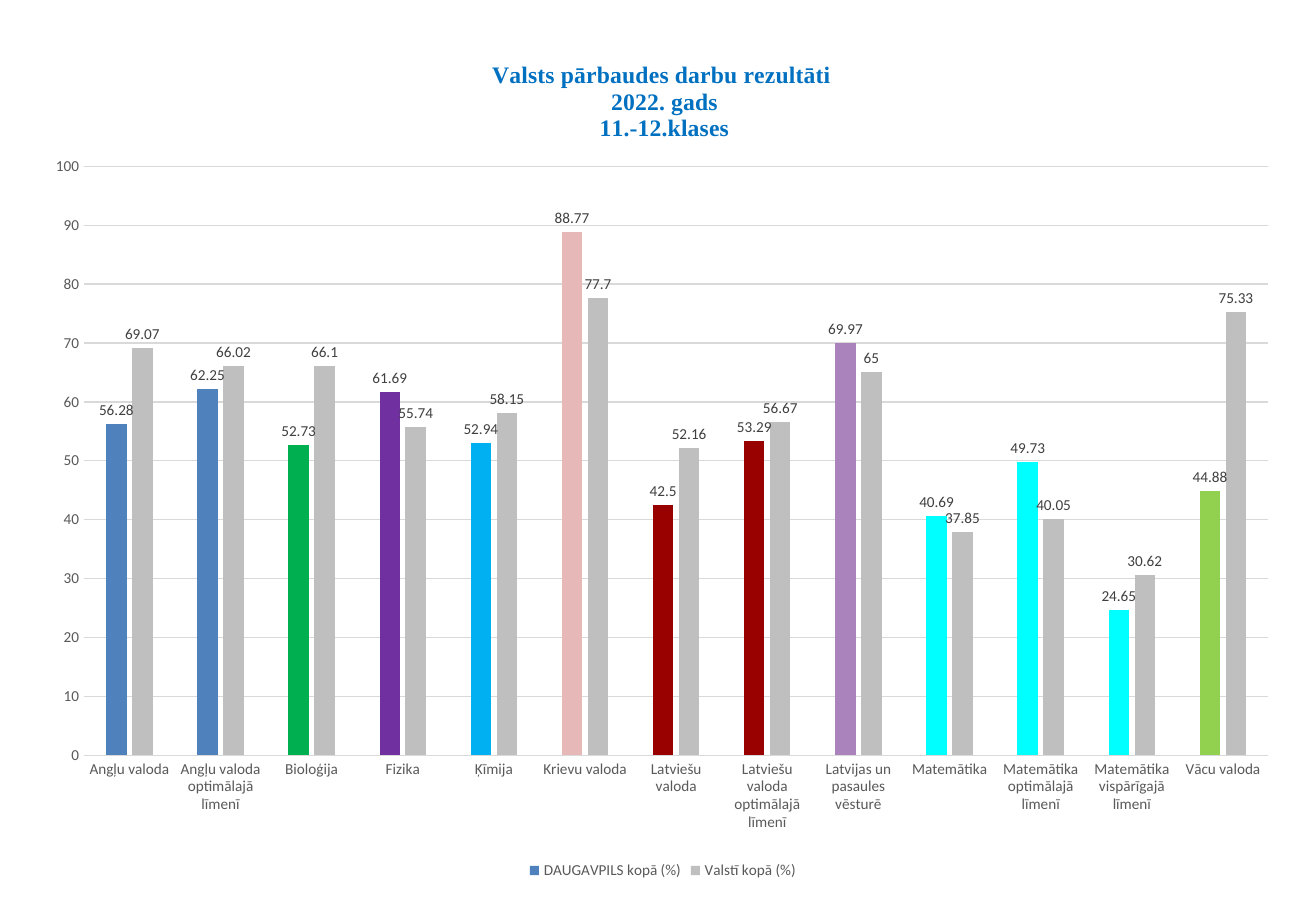
"""Builds a slide with a column chart of state examination results."""
from dataclasses import dataclass

from lxml.etree import SubElement
from pptx import Presentation
from pptx.chart.chart import Chart
from pptx.chart.data import CategoryChartData
from pptx.dml.color import RGBColor
from pptx.enum.chart import (XL_CHART_TYPE, XL_LABEL_POSITION,
                             XL_LEGEND_POSITION, XL_TICK_MARK)
from pptx.oxml import parse_xml
from pptx.oxml.ns import nsdecls, qn
from pptx.text.text import Font
from pptx.util import Emu, Pt

EMU_PER_PX = 9144


@dataclass(frozen=True)
class Theme:
    """Colours, fonts and type sizes of the slide."""
    title: str = "0070C0"
    axis_text: str = "595959"
    label_text: str = "404040"
    line: str = "D9D9D9"
    city: str = "4F81BD"
    country: str = "BFBFBF"
    biology: str = "00B050"
    physics: str = "7030A0"
    chemistry: str = "00B0F0"
    russian: str = "E6B9B8"
    latvian: str = "990000"
    history: str = "AA82BC"
    mathematics: str = "00FFFF"
    german: str = "92D050"
    body_font: str = "Calibri"
    title_font: str = "Times New Roman"
    title_size: float = 14
    body_size: float = 9
    line_width: float = 0.75


@dataclass(frozen=True)
class Box:
    """A rectangle on the slide, in px."""
    left: int
    top: int
    width: int
    height: int


@dataclass(frozen=True)
class Subject:
    """One examination with its two results and the city column's colour."""
    name: str
    city: float
    country: float
    color: str


THEME = Theme()
SLIDE = Box(0, 0, 1083, 750)
CHART = Box(26, 21, 1039, 707)
PLOT = Box(69, 137, 975, 485)
TITLE = Box(402, 46, 280, 66)
TITLE_TEXT = "Valsts pārbaudes darbu rezultāti \n2022. gads\n11.-12.klases"
SUBJECTS = [
    Subject("Angļu valoda", 56.28, 69.07, THEME.city),
    Subject("Angļu valoda optimālajā līmenī", 62.25, 66.02, THEME.city),
    Subject("Bioloģija", 52.73, 66.1, THEME.biology),
    Subject("Fizika", 61.69, 55.74, THEME.physics),
    Subject("Ķīmija", 52.94, 58.15, THEME.chemistry),
    Subject("Krievu valoda", 88.77, 77.7, THEME.russian),
    Subject("Latviešu valoda", 42.5, 52.16, THEME.latvian),
    Subject("Latviešu valoda optimālajā līmenī", 53.29, 56.67, THEME.latvian),
    Subject("Latvijas un pasaules vēsturē", 69.97, 65, THEME.history),
    Subject("Matemātika", 40.69, 37.85, THEME.mathematics),
    Subject("Matemātika optimālajā līmenī", 49.73, 40.05, THEME.mathematics),
    Subject("Matemātika vispārīgajā līmenī", 24.65, 30.62, THEME.mathematics),
    Subject("Vācu valoda", 44.88, 75.33, THEME.german),
]


def px(length: int) -> Emu:
    """Turn px into EMU."""
    return Emu(length * EMU_PER_PX)


def style_font(font: Font, color: str, size: float = THEME.body_size,
               name: str = THEME.body_font, bold: bool = False) -> None:
    """Set a font's face, size, weight and colour."""
    font.name, font.size, font.bold = name, Pt(size), bold
    font.color.rgb = RGBColor.from_string(color)


def style_line(line) -> None:
    """Give an axis or gridline the thin light line."""
    line.color.rgb = RGBColor.from_string(THEME.line)
    line.width = Pt(THEME.line_width)


def place(parent, index: int, box: Box, inner: bool = False) -> None:
    """Fix a chart part's position as fractions of the chart."""
    for automatic in parent.findall(qn("c:layout")):
        parent.remove(automatic)
    layout = parse_xml(f"<c:layout {nsdecls('c')}/>")
    parent.insert(index, layout)
    manual = SubElement(layout, qn("c:manualLayout"))
    settings = {"xMode": "edge", "yMode": "edge",
                "x": (box.left - CHART.left) / CHART.width,
                "y": (box.top - CHART.top) / CHART.height}
    if inner:
        settings = {"layoutTarget": "inner", **settings,
                    "w": box.width / CHART.width,
                    "h": box.height / CHART.height}
    for tag, value in settings.items():
        SubElement(manual, qn(f"c:{tag}")).set("val", str(value))


def style_title(chart: Chart) -> None:
    """Write and place the chart title."""
    chart.has_title = True
    title = chart.chart_title
    title.text_frame.text = TITLE_TEXT
    for paragraph in title.text_frame.paragraphs:
        for run in paragraph.runs:
            style_font(run.font, THEME.title, THEME.title_size,
                       THEME.title_font, bold=True)
    place(title.element, 1, TITLE)


def style_axes(chart: Chart) -> None:
    """Set the scale, lines and text of both axes."""
    for axis in (chart.category_axis, chart.value_axis):
        axis.major_tick_mark = axis.minor_tick_mark = XL_TICK_MARK.NONE
        style_font(axis.tick_labels.font, THEME.axis_text)
    style_line(chart.category_axis.format.line)
    value_axis = chart.value_axis
    value_axis.minimum_scale, value_axis.maximum_scale = 0, 100
    value_axis.major_unit = 10
    value_axis.format.line.fill.background()
    style_line(value_axis.major_gridlines.format.line)


def style_columns(chart: Chart) -> None:
    """Colour the columns and label them with their values."""
    plot = chart.plots[0]
    plot.vary_by_categories = False
    plot.gap_width, plot.overlap = 219, -27
    for series, color in zip(plot.series, (THEME.city, THEME.country)):
        series.invert_if_negative = False
        series.format.fill.solid()
        series.format.fill.fore_color.rgb = RGBColor.from_string(color)
        labels = series.data_labels
        labels.show_value = True
        labels.position = XL_LABEL_POSITION.OUTSIDE_END
        style_font(labels.font, THEME.label_text)
    for index, subject in enumerate(SUBJECTS):
        if subject.color != THEME.city:
            fill = plot.series[0].points[index].format.fill
            fill.solid()
            fill.fore_color.rgb = RGBColor.from_string(subject.color)


def add_results_chart(slide) -> None:
    """Add the chart comparing city and country results."""
    data = CategoryChartData()
    data.categories = [subject.name for subject in SUBJECTS]
    data.add_series("DAUGAVPILS kopā (%)", [s.city for s in SUBJECTS])
    data.add_series("Valstī kopā (%)", [s.country for s in SUBJECTS])
    chart = slide.shapes.add_chart(
        XL_CHART_TYPE.COLUMN_CLUSTERED, px(CHART.left), px(CHART.top),
        px(CHART.width), px(CHART.height), data).chart
    style_font(chart.font, THEME.axis_text)
    style_title(chart)
    style_axes(chart)
    style_columns(chart)
    chart.has_legend = True
    chart.legend.position = XL_LEGEND_POSITION.BOTTOM
    chart.legend.include_in_layout = False
    style_font(chart.legend.font, THEME.axis_text)
    place(next(chart.element.iter(qn("c:plotArea"))), 0, PLOT, inner=True)


def main() -> None:
    """Build and save the presentation."""
    presentation = Presentation()
    presentation.slide_width = px(SLIDE.width)
    presentation.slide_height = px(SLIDE.height)
    slide = presentation.slides.add_slide(presentation.slide_layouts[6])
    add_results_chart(slide)
    presentation.save("out.pptx")


if __name__ == "__main__":
    main()
